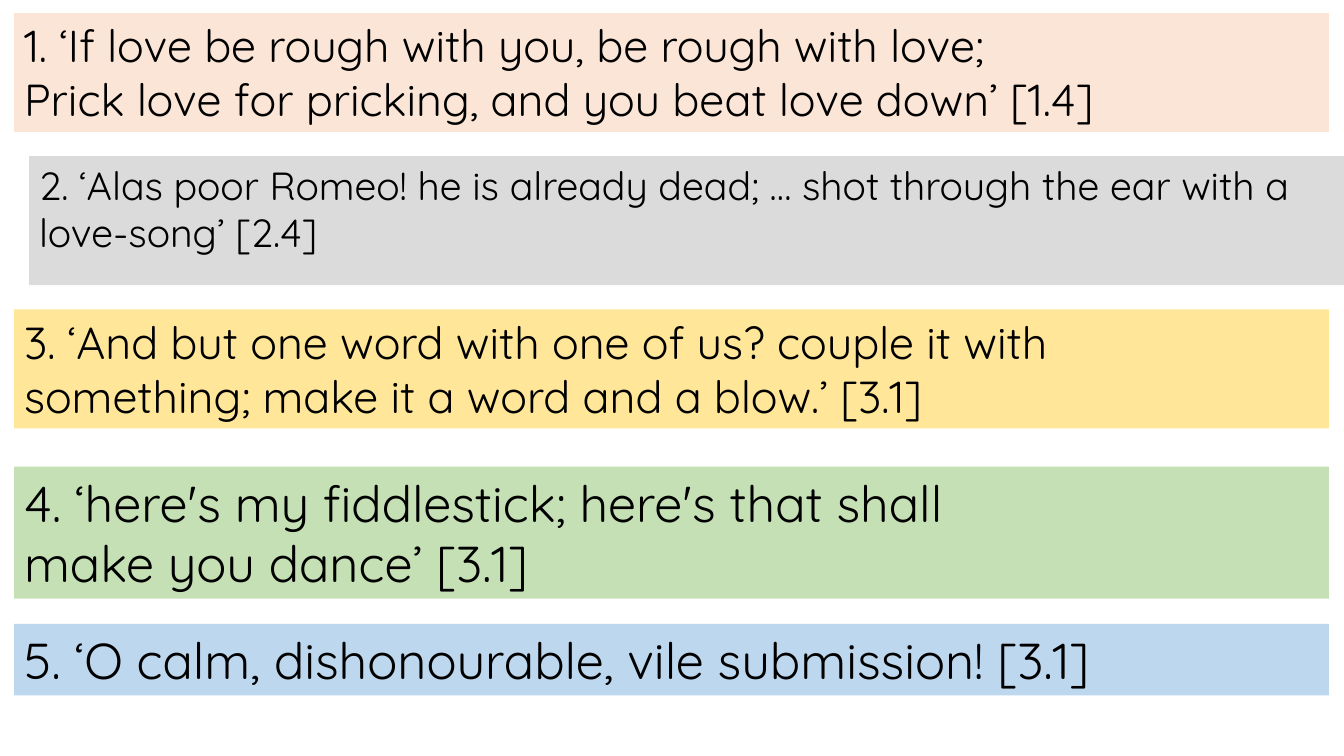
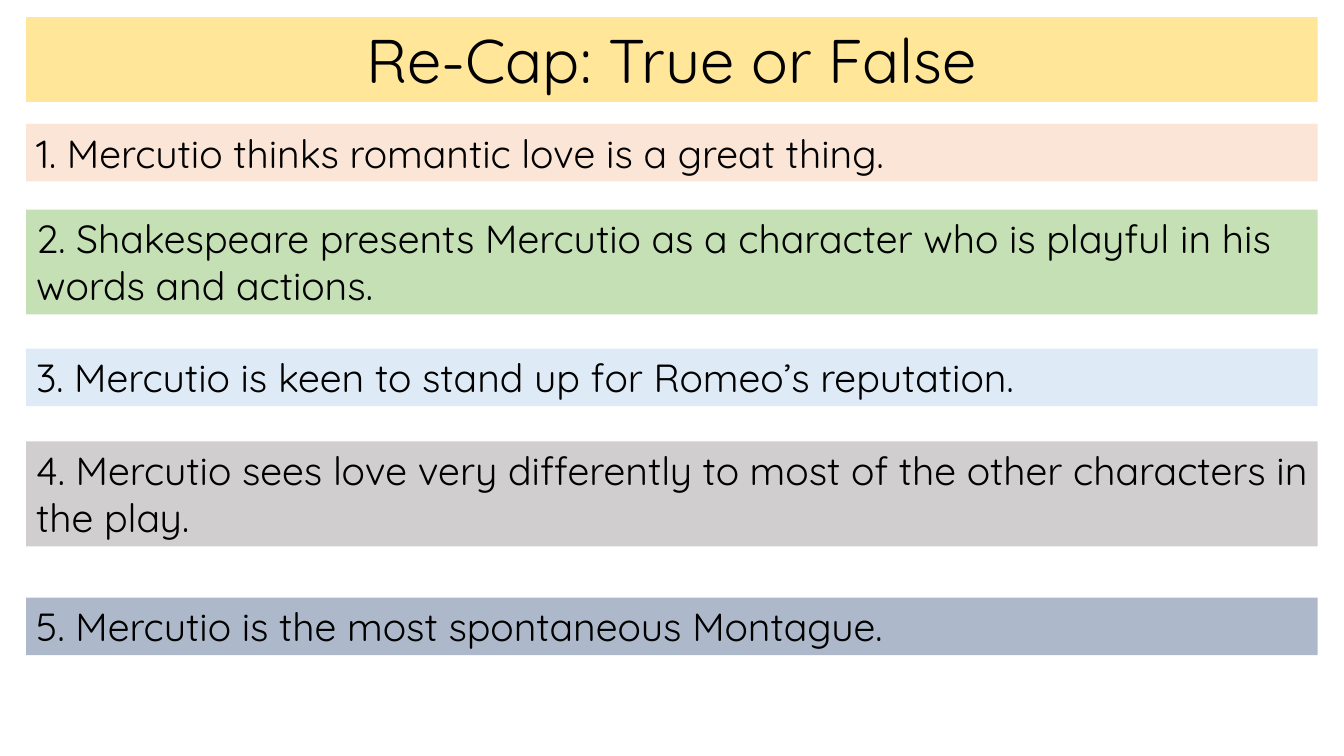
import pptx
import pptx.util
import pptx.dml.color
import pptx.enum.shapes
import pptx.enum.text

Inches = pptx.util.Inches
ALIGN = pptx.enum.text.PP_ALIGN
FONT = "Quicksand"
COLORS = {
    "ink": "000000", "peach": "FBE5D6", "silver": "DBDBDB", "yellow": "FFE699",
    "green": "C5E0B4", "blue": "BDD7EE", "pale": "DEEBF7", "grey": "D0CECE",
    "slate": "ADB9CA",
}

# Bands: top, height, colour, text size, paragraphs, and any settings that differ
QUOTES = [
    (0.13, 1.18, "peach", 32, ["1. ‘If love be rough with you, be rough with love;",
                               "Prick love for pricking, and you beat love down’ [1.4]"], {}),
    (1.55, 1.28, "silver", 28, ["2. ‘Alas poor Romeo! he is already dead; … shot through "
                                "the ear with a love-song’ [2.4]"], {"left": 0.29}),
    (3.07, 1.18, "yellow", 32, ["3. ‘And but one word with one of us? couple it with",
                                "something; make it a word and a blow.’ [3.1]"], {}),
    (4.63, 1.31, "green", 36, ["4. ‘here's my fiddlestick; here's that shall",
                               "make you dance’ [3.1]"], {}),
    (6.19, 0.71, "blue", 36, ["5. ‘O calm, dishonourable, vile submission! [3.1]"], {}),
]
RECAP = [
    (0.17, 0.84, "yellow", 44, ["Re-Cap: True or False"], {"align": ALIGN.CENTER}),
    (1.23, 0.57, "peach", 28, ["1. Mercutio thinks romantic love is a great thing."], {}),
    (2.08, 1.04, "green", 28, ["2. Shakespeare presents Mercutio as a character who is "
                               "playful in his words and actions."], {}),
    (3.46, 0.57, "pale", 28, ["3. Mercutio is keen to stand up for Romeo’s reputation."], {}),
    (4.38, 1.04, "grey", 28, ["4. Mercutio sees love very differently to most of the "
                              "other characters in the play."], {}),
    (5.93, 0.57, "slate", 28, ["5. Mercutio is the most spontaneous Montague."], {}),
]
# Slides: left edge and width of the bands, then the bands
SLIDES = [(0.14, 13.04, QUOTES), (0.26, 12.81, RECAP)]

FRAME = {
    "word_wrap": True,
    "auto_size": pptx.enum.text.MSO_AUTO_SIZE.NONE,
    "vertical_anchor": pptx.enum.text.MSO_ANCHOR.TOP,
    "margin_left": Inches(0.1), "margin_right": Inches(0.1),
    "margin_top": Inches(0.05), "margin_bottom": Inches(0.05),
}


def style(item, values):
    for name, value in values.items():
        setattr(item, name, value)


def color(name):
    return pptx.dml.color.RGBColor.from_string(COLORS[name])


def band(slide, left, top, width, height, fill, size, lines, align=ALIGN.LEFT):
    """Draw a filled strip holding one paragraph per line."""
    box = slide.shapes.add_shape(
        pptx.enum.shapes.MSO_SHAPE.RECTANGLE,
        *(Inches(n) for n in (left, top, width, height)))
    box.shadow.inherit = False
    box.fill.solid()
    box.fill.fore_color.rgb = color(fill)
    box.line.fill.background()
    frame = box.text_frame
    style(frame, FRAME)
    frame.text = "\n".join(lines)
    for para in frame.paragraphs:
        para.alignment = align
        style(para.font, {"name": FONT, "size": pptx.util.Pt(size)})
        para.font.color.rgb = color("ink")


def main():
    deck = pptx.Presentation()
    style(deck, {"slide_width": Inches(13.33), "slide_height": Inches(7.5)})
    for left, width, bands in SLIDES:
        slide = deck.slides.add_slide(deck.slide_layouts[6])
        for top, height, fill, size, lines, extra in bands:
            place = {"left": left, "width": width, **extra}
            band(slide, top=top, height=height, fill=fill, size=size,
                 lines=lines, **place)
    deck.save("out.pptx")


if __name__ == "__main__":
    main()
